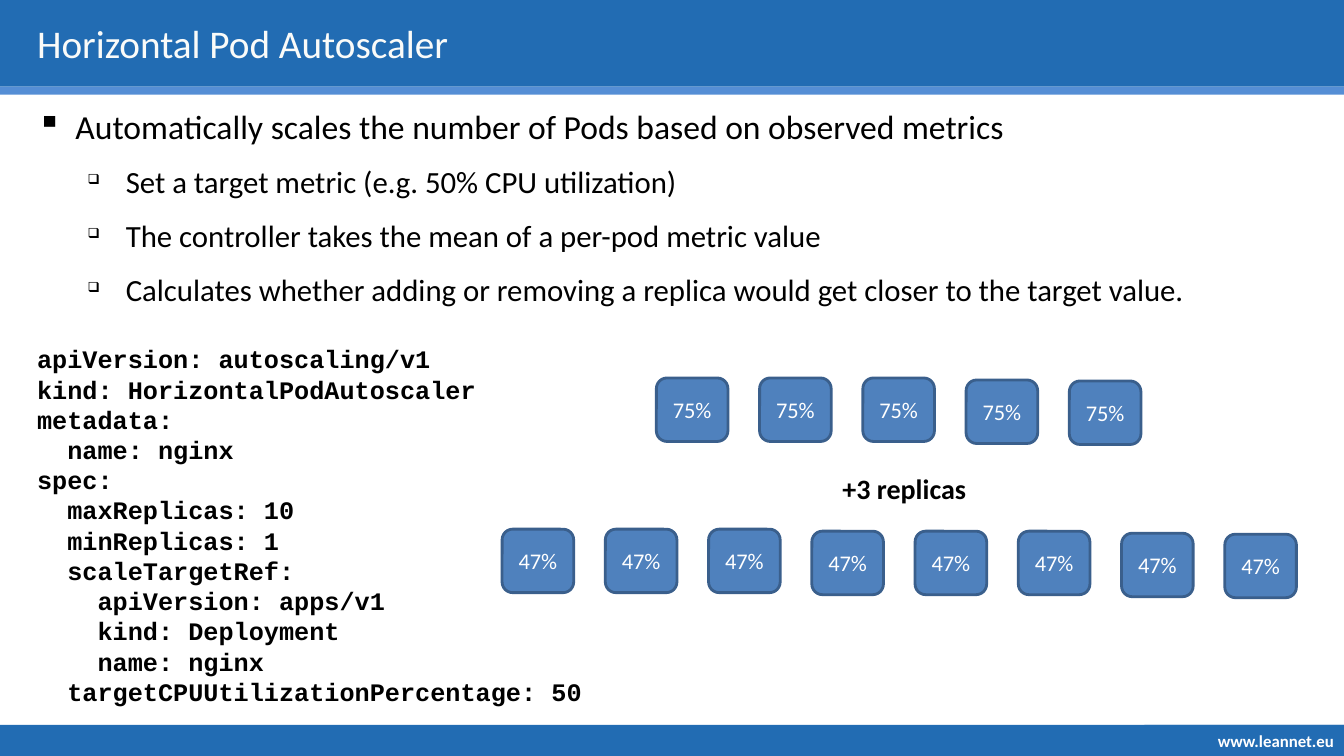
from lxml.etree import SubElement
from pptx import Presentation
from pptx.dml.color import RGBColor
from pptx.enum.shapes import MSO_SHAPE
from pptx.enum.text import MSO_ANCHOR, PP_ALIGN
from pptx.oxml.ns import qn
from pptx.util import Inches, Pt

NAVY = RGBColor(0x22, 0x6C, 0xB3)
SKY = RGBColor(0x55, 0x8E, 0xD5)
BLUE = RGBColor(0x4F, 0x81, 0xBD)
EDGE = RGBColor(0x3A, 0x5F, 0x8C)
PALE = RGBColor(0xFA, 0xFB, 0xF9)
WHITE = RGBColor(0xFF, 0xFF, 0xFF)
BLACK = RGBColor(0, 0, 0)

WIDE, HIGH = 13.33, 7.5
STEP = 1.024

POINTS = [
    (0, "Automatically scales the number of Pods based on observed metrics"),
    (1, "Set a target metric (e.g. 50% CPU utilization)"),
    (1, "The controller takes the mean of a per-pod metric value"),
    (1, "Calculates whether adding or removing a replica would get closer to the target value."),
]
LEVELS = [
    {"char": "▪", "size": 24, "left": 0.65, "scale": 100},
    {"char": "❑", "size": 22, "left": 1.15, "scale": 45},
]
CODE = """apiVersion: autoscaling/v1
kind: HorizontalPodAutoscaler
metadata:
  name: nginx
spec:
  maxReplicas: 10
  minReplicas: 1
  scaleTargetRef:
    apiVersion: apps/v1
    kind: Deployment
    name: nginx
  targetCPUUtilizationPercentage: 50"""


def style(par, size, color=BLACK, bold=False, name="Calibri"):
    form = {"size": Pt(size), "bold": bold, "name": name}
    for key, value in form.items():
        setattr(par.font, key, value)
    par.font.color.rgb = color


def add_box(slide, kind, area, fill, edge=None):
    box = slide.shapes.add_shape(kind, *map(Inches, area))
    box.shadow.inherit = False
    box.fill.solid()
    box.fill.fore_color.rgb = fill
    if edge is None:
        box.line.fill.background()
    else:
        box.line.color.rgb = edge
        box.line.width = Pt(2)
    return box


def write(frame, text, align, anchor=MSO_ANCHOR.MIDDLE, wrap=True, **form):
    frame.word_wrap = wrap
    frame.vertical_anchor = anchor
    for num, line in enumerate(text.split("\n")):
        par = frame.add_paragraph() if num else frame.paragraphs[0]
        par.text = line
        par.alignment = align
        style(par, **form)


def add_text(slide, area, text, align=PP_ALIGN.LEFT, **form):
    box = slide.shapes.add_textbox(*map(Inches, area))
    write(box.text_frame, text, align, **form)


def add_list(slide, area, points):
    frame = slide.shapes.add_textbox(*map(Inches, area)).text_frame
    frame.word_wrap = True
    for num, (level, text) in enumerate(points):
        par = frame.add_paragraph() if num else frame.paragraphs[0]
        look = LEVELS[level]
        par.text = text
        par.level = level
        if num:
            par.space_before = Pt(12)
        props = par._p.get_or_add_pPr()
        props.set("marL", str(Inches(look["left"])))
        props.set("indent", str(Inches(-0.38)))
        SubElement(props, qn("a:buSzPct"), val=str(look["scale"] * 1000))
        SubElement(props, qn("a:buChar"), char=look["char"])
        style(par, look["size"])


def add_pods(slide, left, top, label, drops):
    for num, drop in enumerate(drops):
        area = (left + num * STEP, top + drop, 0.71, 0.63)
        pod = add_box(slide, MSO_SHAPE.ROUNDED_RECTANGLE, area, BLUE, EDGE)
        write(pod.text_frame, label, PP_ALIGN.CENTER, size=16, color=WHITE)


def add_frame(slide):
    rect = MSO_SHAPE.RECTANGLE
    add_box(slide, rect, (0, 0, WIDE, 0.86), NAVY)
    add_box(slide, rect, (0, 7.19, WIDE, 0.31), NAVY)
    site = add_box(slide, rect, (11.35, 7.19, 1.98, 0.31), NAVY)
    write(site.text_frame, "www.leannet.eu", PP_ALIGN.RIGHT,
          size=12, color=WHITE, bold=True)
    add_box(slide, rect, (0, 0.86, WIDE, 0.08), SKY)


def main():
    deck = Presentation()
    deck.slide_width, deck.slide_height = Inches(WIDE), Inches(HIGH)
    slide = deck.slides.add_slide(deck.slide_layouts[6])
    add_frame(slide)
    add_text(slide, (0.27, 0, 9.77, 0.86), "Horizontal Pod Autoscaler",
             size=28, color=PALE)
    add_list(slide, (0, 1, WIDE, 2.66), POINTS)
    add_text(slide, (0.27, 3.36, 5.63, 3.74), CODE, anchor=MSO_ANCHOR.TOP,
             wrap=False, size=18, bold=True, name="Courier New")
    add_pods(slide, 6.51, 3.75, "75%", [0, 0, 0, 0.02, 0.03])
    add_pods(slide, 4.98, 5.25, "47%",
             [0, 0, 0, 0.02, 0.02, 0.02, 0.04, 0.05])
    add_text(slide, (8.25, 4.63, 1.44, 0.44), "+3 replicas", PP_ALIGN.CENTER,
             anchor=MSO_ANCHOR.TOP, wrap=False, size=20, bold=True)
    deck.save("out.pptx")


if __name__ == "__main__":
    main()
